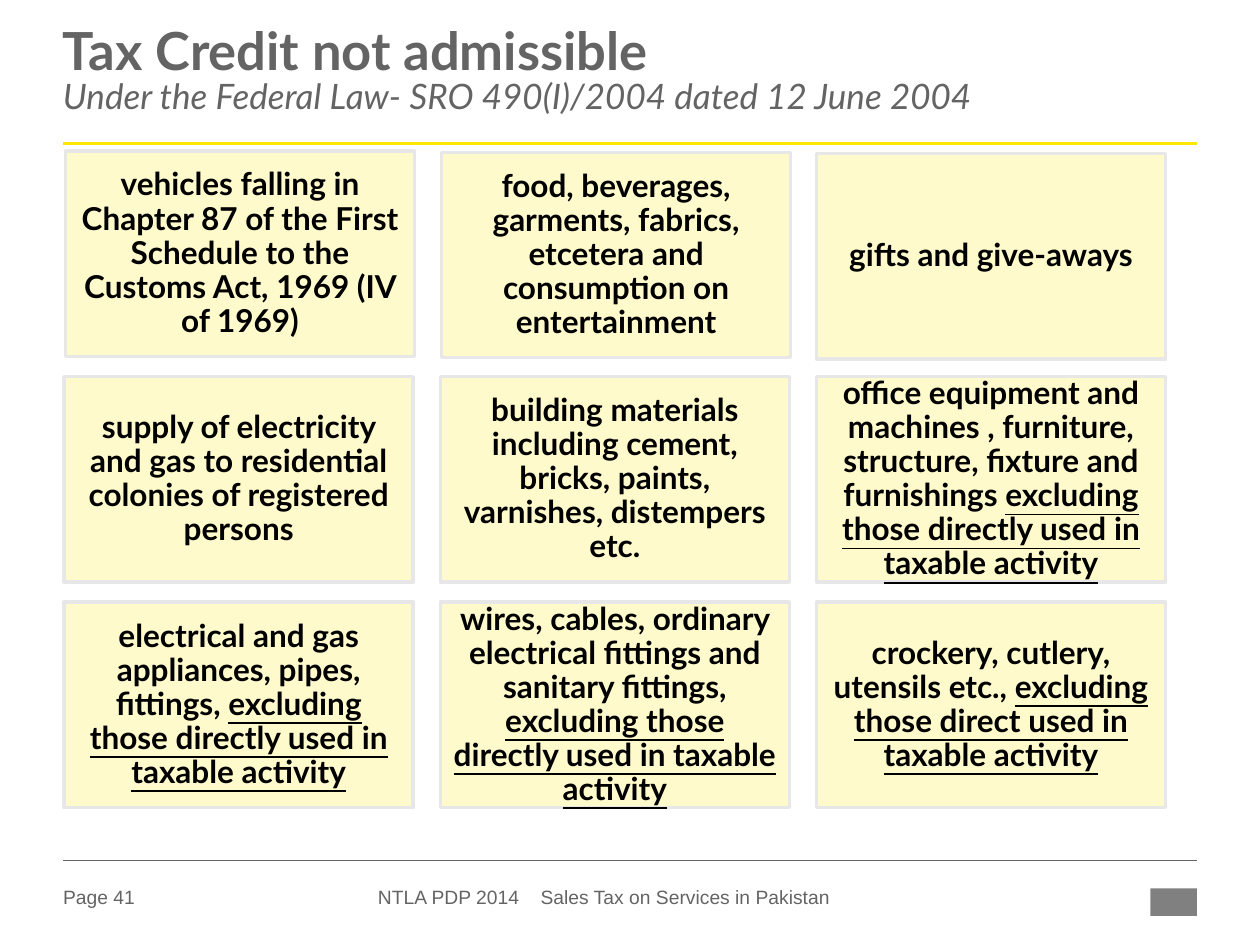
from lxml import etree
from pptx import Presentation
from pptx.dml.color import RGBColor
from pptx.enum.shapes import MSO_CONNECTOR, MSO_SHAPE
from pptx.enum.text import MSO_ANCHOR, PP_ALIGN
from pptx.oxml.ns import qn
from pptx.util import Inches, Pt

RECT, LINE = MSO_SHAPE.RECTANGLE, MSO_CONNECTOR.STRAIGHT
TOP, MIDDLE = MSO_ANCHOR.TOP, MSO_ANCHOR.MIDDLE
LEFT, CENTER = PP_ALIGN.LEFT, PP_ALIGN.CENTER

GREY = RGBColor(0x64, 0x64, 0x64)
MARK = RGBColor(0x80, 0x80, 0x80)
GOLD = RGBColor(0xFF, 0xE6, 0x00)
CREAM = RGBColor(0xFF, 0xFA, 0xCC)
EDGE = RGBColor(0xE7, 0xE7, 0xE7)
BLACK = RGBColor(0, 0, 0)

# Content: each card is plain text, then underlined text
TITLE = "Tax Credit not admissible "
SUBTITLE = "Under the Federal Law- SRO 490(I)/2004 dated 12 June 2004"
PAGE = "Page 41"
FOOTER = "NTLA PDP 2014\tSales Tax on Services in Pakistan"
USED = "excluding those directly used in taxable activity"
CARDS = [
    [("vehicles falling in Chapter 87 of the First Schedule to the "
      "Customs Act, 1969 (IV of 1969)", ""),
     ("food, beverages, garments, fabrics, etcetera and consumption on "
      "entertainment", ""),
     ("gifts and give-aways", "")],
    [("supply of electricity and gas to residential colonies of "
      "registered persons", ""),
     ("building materials including cement, bricks, paints, varnishes, "
      "distempers etc.", ""),
     ("office equipment and machines , furniture, structure, fixture and "
      "furnishings ", USED)],
    [("electrical and gas appliances, pipes, fittings, ", USED),
     ("wires, cables, ordinary electrical fittings and sanitary "
      "fittings, ", USED),
     ("crockery, cutlery, utensils etc., ",
      "excluding those direct used in taxable activity")],
]

# Grid, in inches
WIDE, HIGH, EDGE_X = 10, 7.5, 0.5
GRID_X, GRID_Y = 0.51, 1.2
CARD_W, CARD_H = 2.77, 1.63
STEP_X, STEP_Y = 2.985, 1.79
NUDGE = [(0.01, 0), (0.01, 0.01), (0, 0.02)]  # top row sits slightly off
FOOT_Y, FOOT_H = 7.01, 0.22

# Text formats
HEAD = dict(name="Lato", size=Pt(30), bold=True)
SUB = dict(name="Lato", size=Pt(20), bold=False, italic=True)
FOOT = dict(name="Arial", size=Pt(11))
BODY = dict(name="Lato", size=Pt(18), bold=True)
UNDER = dict(BODY, underline=True)

deck = Presentation()
deck.slide_width, deck.slide_height = Inches(WIDE), Inches(HIGH)
slide = deck.slides.add_slide(deck.slide_layouts[6])
shapes = slide.shapes


def add_run(para, text, form, color):
    run = para.add_run()
    run.text = text
    for key, value in form.items():
        setattr(run.font, key, value)
    run.font.color.rgb = color


def set_frame(shape, pad, anchor, align, space):
    frame = shape.text_frame
    frame.word_wrap = True
    frame.vertical_anchor = anchor
    for side in ("left", "top", "right", "bottom"):
        setattr(frame, "margin_" + side, Inches(pad))
    para = frame.paragraphs[0]
    para.alignment, para.line_spacing = align, space
    return para


def add_text(box, anchor=MIDDLE, space=1.0):
    shape = shapes.add_textbox(*map(Inches, box))
    return set_frame(shape, 0, anchor, LEFT, space)


def add_rect(box, fill):
    shape = shapes.add_shape(RECT, *map(Inches, box))
    shape.shadow.inherit = False
    shape.fill.solid()
    shape.fill.fore_color.rgb = fill
    shape.line.fill.background()
    return shape


def add_rule(y, color, width):
    rule = shapes.add_connector(
        LINE, *map(Inches, (EDGE_X, y, WIDE - EDGE_X, y)))
    rule.line.color.rgb, rule.line.width = color, Pt(width)
    etree.SubElement(rule._element.spPr, qn("a:effectLst"))


# Rules and footer, with a plain block for the mark
add_rule(1.14, GOLD, 1.5)
add_rule(6.83, GREY, 0.25)
add_run(add_text((EDGE_X, FOOT_Y, 0.79, FOOT_H)), PAGE, FOOT, GREY)
foot = add_text((3, FOOT_Y, 3.76, FOOT_H))
add_run(foot, FOOTER, FOOT, GREY)
tabs = etree.SubElement(foot._p.get_or_add_pPr(), qn("a:tabLst"))
etree.SubElement(tabs, qn("a:tab"), pos=str(Inches(1.29)), algn="l")
add_rect((9.13, 7.05, 0.37, 0.22), MARK)

# Title
title = add_text((EDGE_X, 0.22, WIDE - 2 * EDGE_X, 0.94), TOP, 0.85)
add_run(title, TITLE, HEAD, GREY)
title.add_line_break()
add_run(title, SUBTITLE, SUB, GREY)

# Cards
for row, cards in enumerate(CARDS):
    for col, (plain, under) in enumerate(cards):
        dx, dy = NUDGE[col] if row == 0 else (0, 0)
        card = add_rect((GRID_X + col * STEP_X + dx,
                         GRID_Y + row * STEP_Y + dy, CARD_W, CARD_H), CREAM)
        card.line.color.rgb, card.line.width = EDGE, Pt(2)
        para = set_frame(card, 0.08, MIDDLE, CENTER, 0.9)
        add_run(para, plain, BODY, BLACK)
        if under:
            add_run(para, under, UNDER, BLACK)

deck.save("out.pptx")
